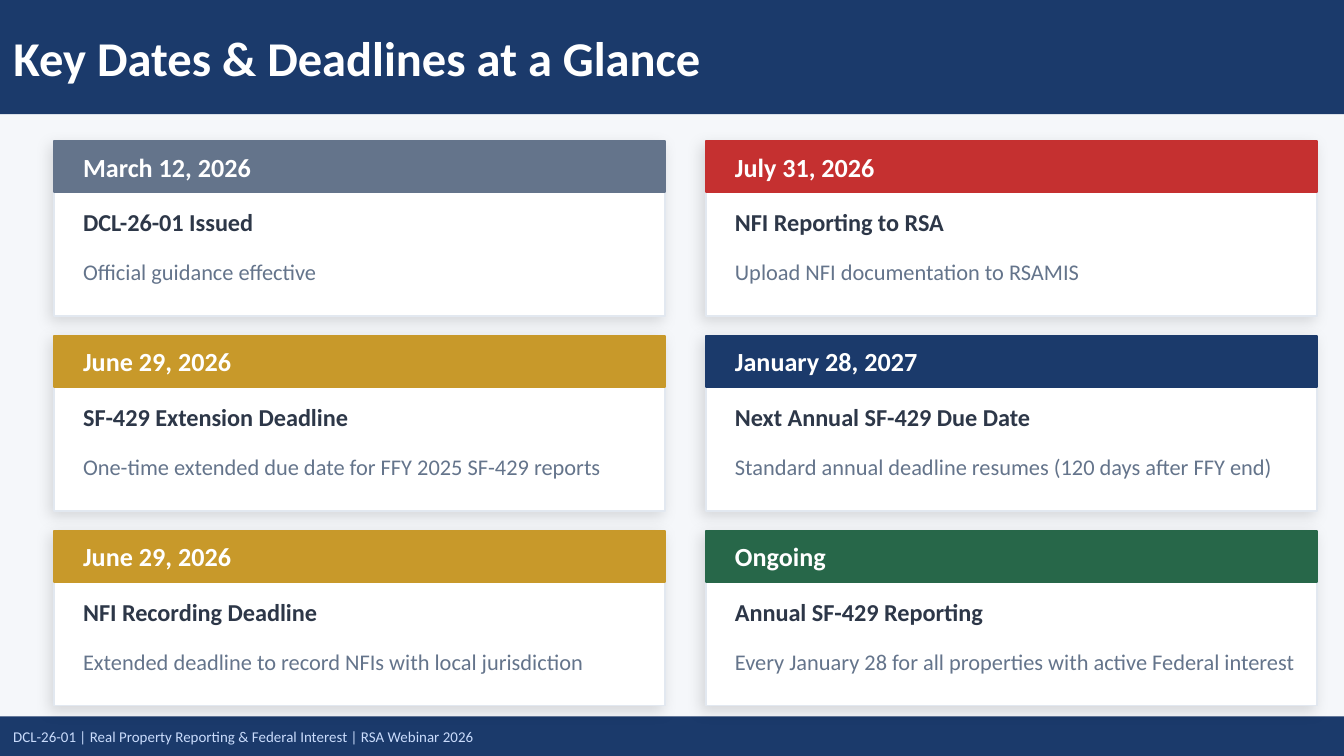
from lxml import etree
from pptx import Presentation
from pptx.dml.color import RGBColor
from pptx.enum import shapes, text
from pptx.oxml.ns import qn
from pptx.util import Inches, Pt

NAVY, SLATE, GOLD, WHITE = "1B3A6B", "64748B", "C8992A", "FFFFFF"
TITLE = "Key Dates & Deadlines at a Glance"
FOOTER = "DCL-26-01 | Real Property Reporting & Federal Interest | RSA Webinar 2026"

# Each column runs from top to bottom: date, heading, detail, colour, detail width
COLUMNS = [
    [
        ("March 12, 2026", "DCL-26-01 Issued", "Official guidance effective", SLATE, 4.3),
        ("June 29, 2026", "SF-429 Extension Deadline",
         "One-time extended due date for FFY 2025 SF-429 reports", GOLD, 4.3),
        ("June 29, 2026", "NFI Recording Deadline",
         "Extended deadline to record NFIs with local jurisdiction", GOLD, 4.3),
    ],
    [
        ("July 31, 2026", "NFI Reporting to RSA",
         "Upload NFI documentation to RSAMIS", "C53030", 4.3),
        ("January 28, 2027", "Next Annual SF-429 Due Date",
         "Standard annual deadline resumes (120 days after FFY end)", NAVY, 4.3),
        ("Ongoing", "Annual SF-429 Reporting",
         "Every January 28 for all properties with active Federal interest", "276749", 4.43),
    ],
]
PAGE_WIDTH = 10
PAGE_HEIGHT = PAGE_WIDTH * 9 / 16
FOOTER_TOP = 5.33
LEFT, TOP = 0.4, 1.05
CARD_WIDTH, CARD_HEIGHT, BAND_HEIGHT = 4.55, 1.3, 0.38
COLUMN_STEP, ROW_STEP = 4.85, 1.45
TEXT_INDENT, TEXT_WIDTH = 0.12, 4.3


def color(value):
    return RGBColor.from_string(value)


def write(shape, words, size, shade, bold=False):
    frame = shape.text_frame
    frame.word_wrap = True
    frame.auto_size = text.MSO_AUTO_SIZE.NONE
    frame.vertical_anchor = text.MSO_ANCHOR.MIDDLE
    para = frame.paragraphs[0]
    para.alignment = text.PP_ALIGN.LEFT
    span = para.add_run()
    span.text = words
    span.font.name = "Calibri"
    span.font.size = Pt(size)
    span.font.bold = bold
    span.font.color.rgb = color(shade)


def add_rectangle(page, area, fill, line=None):
    box = page.shapes.add_shape(shapes.MSO_SHAPE.RECTANGLE, *map(Inches, area))
    box.shadow.inherit = False
    box.fill.solid()
    box.fill.fore_color.rgb = color(fill)
    if line:
        box.line.color.rgb = color(line)
        box.line.width = Pt(1)
    else:
        box.line.fill.background()
    return box


def add_soft_shadow(box):
    effects = box.element.spPr.find(qn("a:effectLst"))
    shadow = etree.SubElement(
        effects, qn("a:outerShdw"), blurRad=str(Pt(8)), dist=str(Pt(3)),
        dir=str(135 * 60000), algn="bl", rotWithShape="0")
    black = etree.SubElement(shadow, qn("a:srgbClr"), val="000000")
    etree.SubElement(black, qn("a:alpha"), val="13000")


def add_label(page, area, words, size, shade, bold=False):
    label = page.shapes.add_textbox(*map(Inches, area))
    write(label, words, size, shade, bold)


def add_card(page, left, top, card):
    date, heading, detail, accent, detail_width = card
    body = add_rectangle(page, (left, top, CARD_WIDTH, CARD_HEIGHT), WHITE, "E2E8F0")
    add_soft_shadow(body)
    add_rectangle(page, (left, top, CARD_WIDTH, BAND_HEIGHT), accent, accent)
    inner = left + TEXT_INDENT
    add_label(page, (inner, top, TEXT_WIDTH, BAND_HEIGHT), date, 14, WHITE, True)
    add_label(page, (inner, top + 0.44, TEXT_WIDTH, 0.32), heading, 13, "2D3748", True)
    add_label(page, (inner, top + 0.76, detail_width, 0.42), detail, 12, SLATE)


def main():
    deck = Presentation()
    deck.slide_width, deck.slide_height = Inches(PAGE_WIDTH), Inches(PAGE_HEIGHT)
    page = deck.slides.add_slide(deck.slide_layouts.get_by_name("Title Only"))
    page.background.fill.solid()
    page.background.fill.fore_color.rgb = color("F5F7FA")

    title = page.shapes.title
    title.left, title.top, title.width, title.height = map(
        Inches, (0, 0, PAGE_WIDTH, 0.85))
    title.fill.solid()
    title.fill.fore_color.rgb = color(NAVY)
    write(title, TITLE, 26, WHITE, True)

    footer_area = (0, FOOTER_TOP, PAGE_WIDTH, PAGE_HEIGHT - FOOTER_TOP)
    footer = add_rectangle(page, footer_area, NAVY)
    write(footer, FOOTER, 8, "CADCFC")

    for column, cards in enumerate(COLUMNS):
        for row, card in enumerate(cards):
            add_card(page, LEFT + column * COLUMN_STEP, TOP + row * ROW_STEP, card)

    deck.save("out.pptx")


if __name__ == "__main__":
    main()
